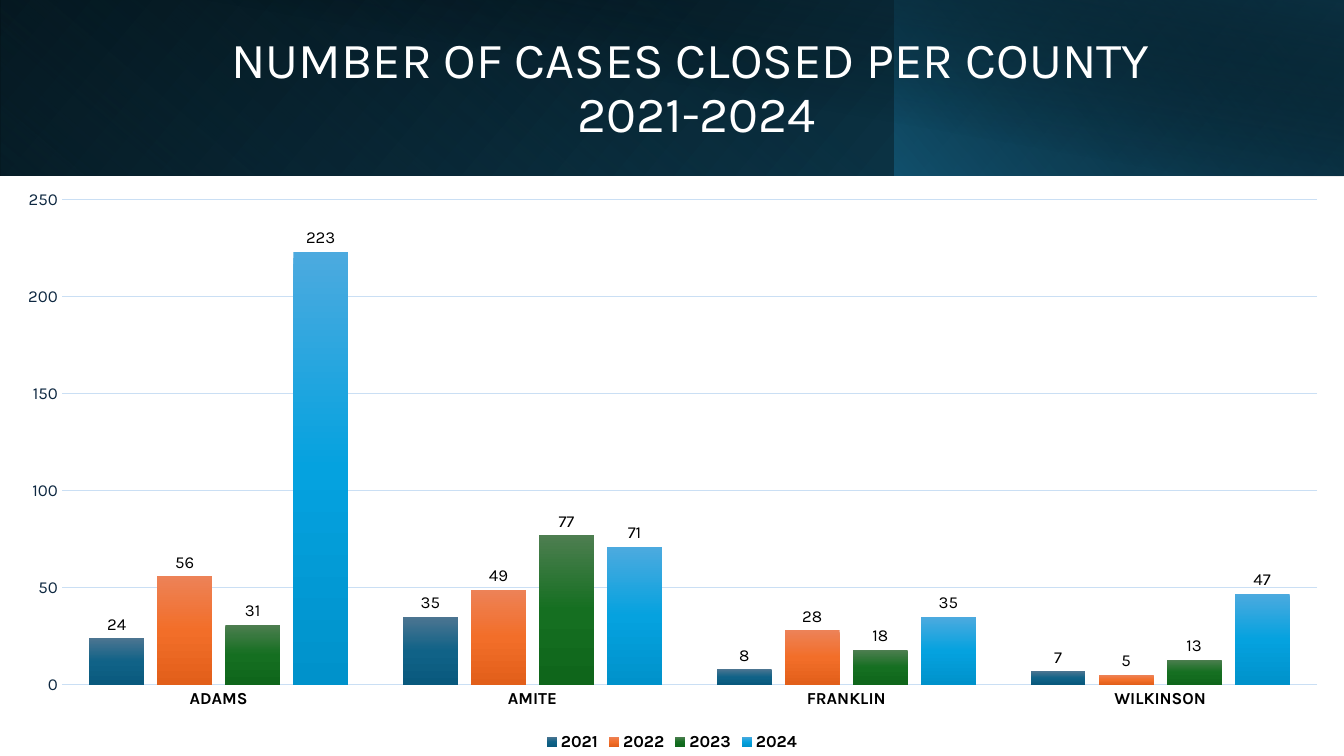
"""Build the slide on cases closed per county, 2021-2024."""
from lxml.etree import SubElement
from pptx import Presentation
from pptx.chart.data import CategoryChartData
from pptx.dml.color import RGBColor
from pptx.enum.chart import XL_CHART_TYPE, XL_LABEL_POSITION, XL_LEGEND_POSITION, XL_TICK_MARK
from pptx.enum.shapes import MSO_SHAPE
from pptx.enum.text import MSO_ANCHOR, PP_ALIGN
from pptx.oxml import parse_xml
from pptx.oxml.ns import nsdecls, qn
from pptx.util import Inches, Pt

THEME = {
    "font": "Karla", "title": 36, "text": 12,
    "white": "FFFFFF", "black": "000000", "navy": "0E2841", "grid": "CADFF4",
    "blue": "156082", "deep": "0B3041", "teal": "104862",
    "bars": [("4C7591", "106287", "09597D"), ("ED8257", "F26E29", "E25F1A"),
             ("4D7E50", "156F21", "0F661B"), ("4CAADF", "05A2DF", "0092CB")],
}


def style(font, size, color, bold=False):
    """Set face, size, colour and weight of a font."""
    font.name, font.size, font.bold = THEME["font"], Pt(size), bold
    font.color.rgb = RGBColor.from_string(color)


def shade(fill, node, stops, angle):
    """Give a node a linear gradient of (place, colour, opacity) stops."""
    fill.gradient()
    grad = next(node.iter(qn("a:gradFill")))
    for child in list(grad):
        grad.remove(child)
    row = SubElement(grad, qn("a:gsLst"))
    for place, color, alpha in stops:
        stop = SubElement(row, qn("a:gs"), pos=str(place * 1000))
        tone = SubElement(stop, qn("a:srgbClr"), val=color)
        if alpha < 100:
            SubElement(tone, qn("a:alpha"), val=str(alpha * 1000))
    SubElement(grad, qn("a:lin"), ang=str(angle * 60000), scaled="0")


deck = Presentation()
deck.slide_width, deck.slide_height = Inches(13.33), Inches(7.5)
slide = deck.slides.add_slide(deck.slide_layouts[5])

blue, deep, black = THEME["blue"], THEME["deep"], THEME["black"]
bands = [
    (0, 13.33, 1.74, 0, True, 140, [(0, black, 100), (100, THEME["teal"], 100)]),
    (0, 8.88, 1.74, 180, True, 230, [(20, blue, 0), (100, deep, 55)]),
    (8.87, 4.46, 1.74, 0, True, 220, [(0, blue, 66), (100, black, 30)]),
    (0.5, 12.83, 1.75, 0, False, 280, [(50, black, 0), (99, deep, 52)]),
]
for left, width, height, turn, flip, angle, stops in bands:
    band = slide.shapes.add_shape(
        MSO_SHAPE.RECTANGLE, Inches(left), 0, Inches(width), Inches(height))
    band.shadow.inherit = False
    band.line.fill.background()
    band.rotation = turn
    if flip:
        band._element.spPr.xfrm.set("flipH", "1")
    shade(band.fill, band._element, stops, angle)

title = slide.shapes.title
slide.shapes._spTree.append(title._element)
title.left, title.top = Inches(1.5), Inches(0.32)
title.width, title.height = Inches(10.82), Inches(1.13)
frame = title.text_frame
frame.text = "NUMBER OF CASES CLOSED PER COUNTY \v2021-2024"
frame.word_wrap = True
frame.vertical_anchor = MSO_ANCHOR.MIDDLE
head = frame.paragraphs[0]
head.alignment = PP_ALIGN.CENTER
head.line_spacing = 0.9
style(head.font, THEME["title"], THEME["white"])

data = CategoryChartData()
data.categories = ["ADAMS", "AMITE", "FRANKLIN", "WILKINSON"]
data.add_series("2021", (24, 35, 8, 7))
data.add_series("2022", (56, 49, 28, 5))
data.add_series("2023", (31, 77, 18, 13))
data.add_series("2024", (223, 71, 35, 47))
chart = slide.shapes.add_chart(
    XL_CHART_TYPE.COLUMN_CLUSTERED, 0, Inches(1.77),
    Inches(13.33), Inches(5.73), data).chart
chart.has_title = False
style(chart.font, THEME["text"], black)

plot = chart.plots[0]
plot.gap_width, plot.overlap = 100, -24
plot.vary_by_categories = False
for bar, tones in zip(plot.series, THEME["bars"]):
    stops = [(50 * step, tone, 100) for step, tone in enumerate(tones)]
    shade(bar.format.fill, bar._element, stops, 90)
    bar.invert_if_negative = False

plot.has_data_labels = True
labels = plot.data_labels
labels.show_value = True
labels.position = XL_LABEL_POSITION.OUTSIDE_END
style(labels.font, THEME["text"], black)

county, count = chart.category_axis, chart.value_axis
style(county.tick_labels.font, THEME["text"], black, True)
style(count.tick_labels.font, THEME["text"], THEME["navy"])
for axis in (county, count):
    axis.major_tick_mark = axis.minor_tick_mark = XL_TICK_MARK.NONE
count.minimum_scale, count.maximum_scale, count.major_unit = 0, 250, 50
count.format.line.fill.background()
for line in (county.format.line, count.major_gridlines.format.line):
    line.color.rgb = RGBColor.from_string(THEME["grid"])
    line.width = Pt(0.75)

chart.has_legend = True
chart.legend.position = XL_LEGEND_POSITION.BOTTOM
chart.legend.include_in_layout = False
style(chart.legend.font, THEME["text"], black, True)

layout = parse_xml(f"<c:layout {nsdecls('c')}><c:manualLayout/></c:layout>")
rules = [("layoutTarget", "inner"), ("xMode", "edge"), ("yMode", "edge"),
         ("x", "0.046"), ("y", "0.037"), ("w", "0.934"), ("h", "0.84")]
for name, value in rules:
    SubElement(layout[0], qn(f"c:{name}"), val=value)
chart._chartSpace.chart.plotArea.insert(0, layout)

deck.save("out.pptx")
